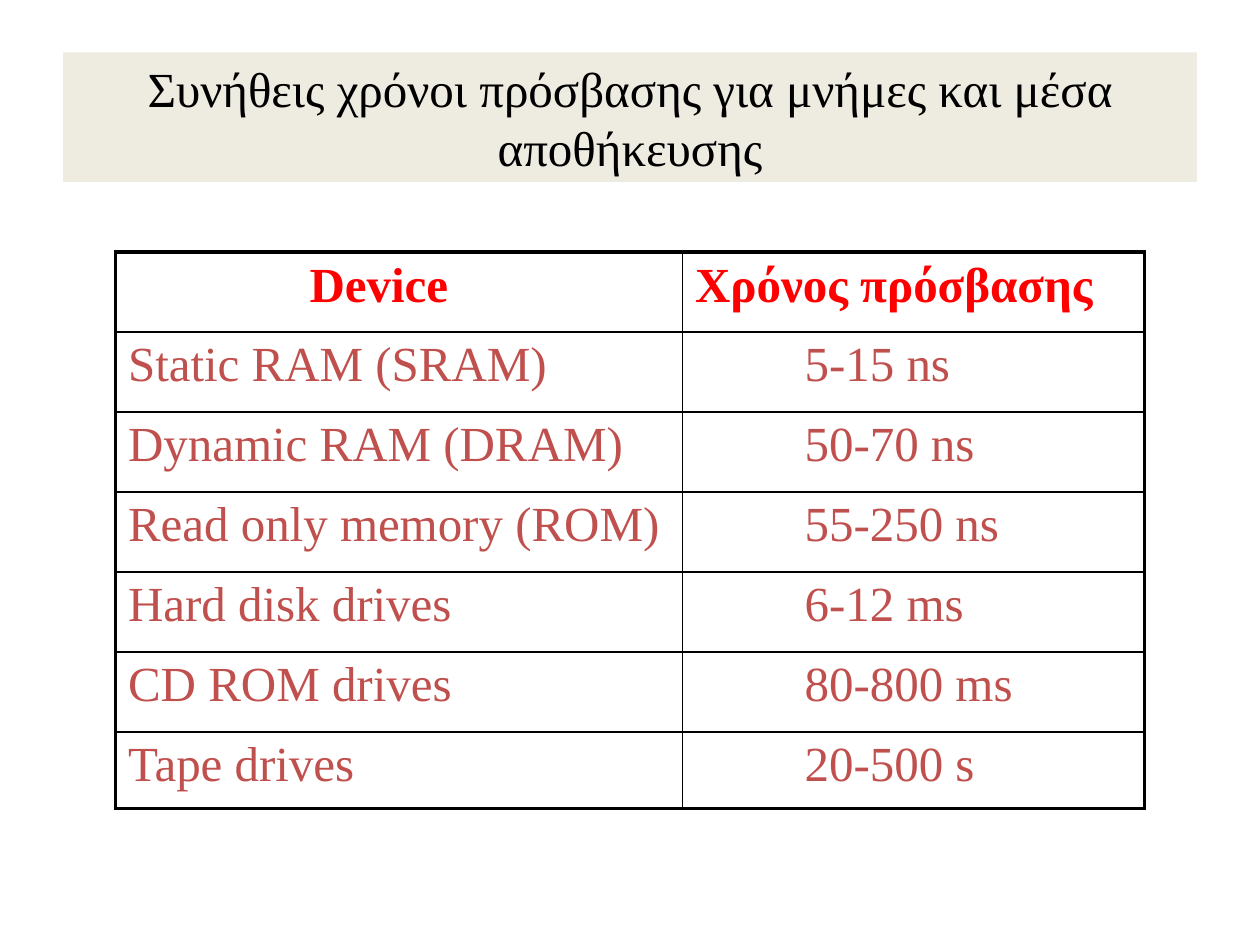
from lxml import etree
from pptx import Presentation
from pptx.dml.color import RGBColor
from pptx.enum.text import MSO_ANCHOR, MSO_AUTO_SIZE, PP_ALIGN
from pptx.oxml.ns import qn
from pptx.util import Pt

MIDDLE, NO_FIT, CENTER = MSO_ANCHOR.MIDDLE, MSO_AUTO_SIZE.NONE, PP_ALIGN.CENTER

TITLE = "Συνήθεις χρόνοι πρόσβασης για μνήμες και μέσα αποθήκευσης"
ROWS = [
    ("Device", "Χρόνος πρόσβασης"),
    ("Static RAM (SRAM)", "5-15 ns"),
    ("Dynamic RAM (DRAM)", "50-70 ns"),
    ("Read only memory (ROM)", "55-250 ns"),
    ("Hard disk drives", "6-12 ms"),
    ("CD ROM drives", "80-800 ms"),
    ("Tape drives", "20-500 s"),
]
WIDTHS = (324, 264)
HEIGHTS = [45.7] * (len(ROWS) - 1) + [44]
HEAD_INDENTS, BODY_INDENTS = (103.7, 0), (0, 62.6)
THICK, THIN = 2.25, 1
FONT = "Times New Roman"


def color(code):
    """Turn a hex string into a colour."""
    return RGBColor.from_string(code)


def write(frame, text, ink="000000", bold=False, indent=0, align=None):
    """Put formatted text into a frame."""
    para = frame.paragraphs[0]
    props = para._p.get_or_add_pPr()
    props.set("marL", str(Pt(indent)))
    props.set("indent", "0")
    para.alignment = align
    para.space_before = Pt(0)
    run = para.add_run()
    run.text = text
    font = run.font
    font.name, font.size, font.bold = FONT, Pt(28), bold
    font.color.rgb = color(ink)


def border(cell, sides):
    """Draw black borders of the given widths on a cell."""
    props = cell._tc.get_or_add_tcPr()
    for place, (side, width) in enumerate(sides.items()):
        line = etree.Element(qn(f"a:ln{side}"), w=str(Pt(width)))
        fill = etree.SubElement(line, qn("a:solidFill"))
        etree.SubElement(fill, qn("a:srgbClr"), val="000000")
        props.insert(place, line)


def add_title(slide):
    """Place the shaded title."""
    title = slide.shapes.title
    title.left, title.top, title.width, title.height = map(Pt, (36, 30, 648, 74))
    title.fill.solid()
    title.fill.fore_color.rgb = color("EEECE1")
    frame = title.text_frame
    frame.word_wrap, frame.auto_size = True, NO_FIT
    frame.vertical_anchor = MIDDLE
    write(frame, TITLE, align=CENTER)


def add_times(slide):
    """Build the table of access times."""
    count, span = len(ROWS), len(WIDTHS)
    table = slide.shapes.add_table(
        count, span, Pt(66), Pt(144), Pt(sum(WIDTHS)), Pt(sum(HEIGHTS))
    ).table
    table.first_row = table.horz_banding = False
    for col, width in zip(table.columns, WIDTHS):
        col.width = Pt(width)
    for r, (row, height) in enumerate(zip(ROWS, HEIGHTS)):
        table.rows[r].height = Pt(height)
        head = r == 0
        indents = HEAD_INDENTS if head else BODY_INDENTS
        for c, text in enumerate(row):
            cell = table.cell(r, c)
            cell.fill.background()
            write(cell.text_frame, text, ink="FF0000" if head else "C0504D",
                  bold=head, indent=indents[c])
            edges = {"L": c == 0, "R": c == span - 1, "T": head, "B": r == count - 1}
            border(cell, {side: THICK if outer else THIN for side, outer in edges.items()})


def main():
    """Build and save the slide."""
    deck = Presentation()
    deck.slide_width, deck.slide_height = Pt(720), Pt(540)
    slide = deck.slides.add_slide(deck.slide_layouts[5])
    add_times(slide)
    add_title(slide)
    deck.save("out.pptx")


if __name__ == "__main__":
    main()
